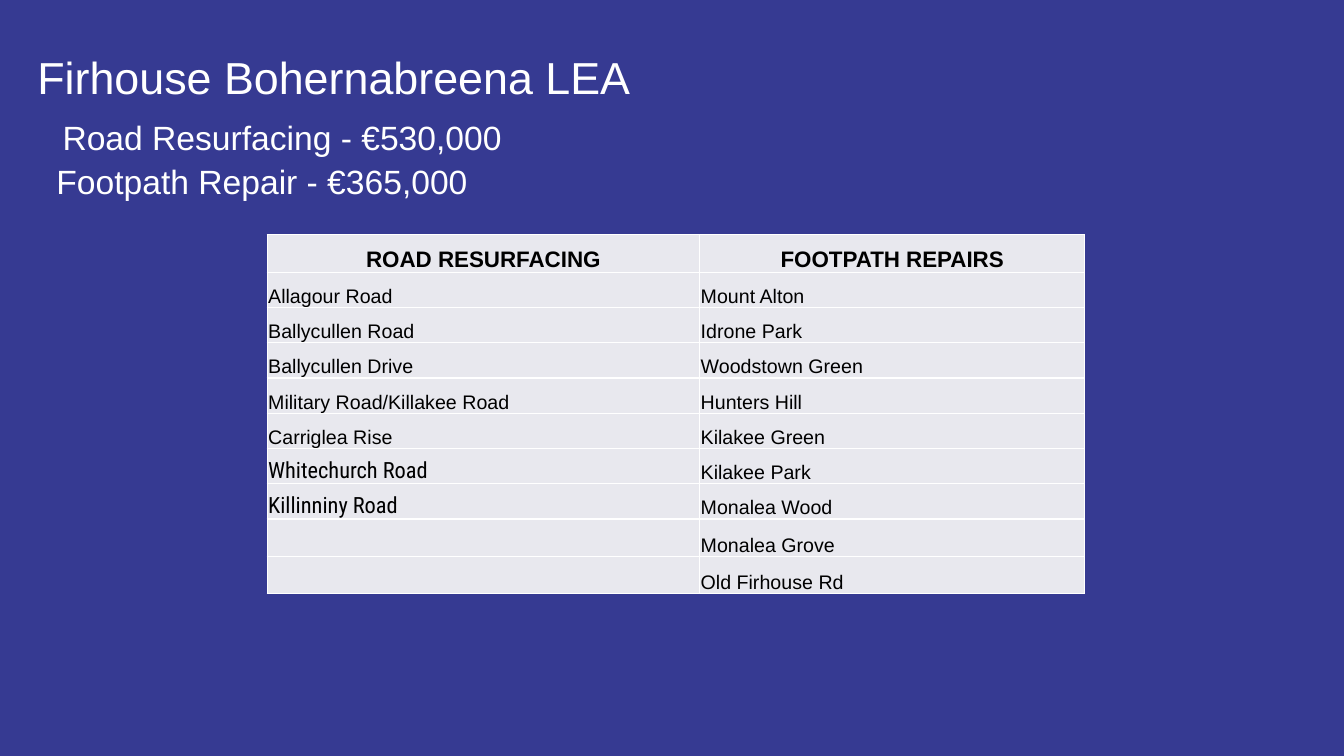
"""Build the Firhouse Bohernabreena road and footpath works slide."""
from itertools import zip_longest

from lxml.etree import SubElement
from pptx import Presentation
from pptx.dml.color import RGBColor
from pptx.enum.text import MSO_ANCHOR as Anchor, MSO_AUTO_SIZE as AutoSize, PP_ALIGN as Align
from pptx.oxml.ns import qn
from pptx.util import Inches, Pt


def paint(fill, color):
    fill.solid()
    fill.fore_color.rgb = RGBColor.from_string(color)


def add_borders(cell, color, points):
    properties = cell._tc.get_or_add_tcPr()
    for position, side in enumerate(("lnL", "lnR", "lnT", "lnB")):
        line = properties.makeelement(qn(f"a:{side}"), {"w": str(Pt(points))})
        properties.insert(position, line)
        solid = SubElement(line, qn("a:solidFill"))
        SubElement(solid, qn("a:srgbClr"), val=color)


TITLE_LINES = [
    ("Firhouse Bohernabreena LEA", 32, 0, 0),
    ("Road Resurfacing - €530,000", 24, 0.25, 6.5),
    ("Footpath Repair - €365,000", 24, 0.19, 0),
]
ROADS = ["ROAD RESURFACING", "Allagour Road", "Ballycullen Road", "Ballycullen Drive",
         "Military Road/Killakee Road", "Carriglea Rise", "Whitechurch Road", "Killinniny Road"]
FOOTPATHS = ["FOOTPATH REPAIRS", "Mount Alton", "Idrone Park", "Woodstown Green", "Hunters Hill",
             "Kilakee Green", "Kilakee Park", "Monalea Wood", "Monalea Grove", "Old Firhouse Rd"]
CONDENSED = ROADS[-2:]
COLUMN_WIDTHS = [4.29, 3.82]
ROW_HEIGHTS = [0.37] + [0.35] * 7 + [0.37] * 2

presentation = Presentation()
presentation.slide_width, presentation.slide_height = Inches(13.33), Inches(7.5)
slide = presentation.slides.add_slide(presentation.slide_layouts[5])
paint(slide.background.fill, "363A92")

title = slide.shapes.title
title.left, title.top, title.width, title.height = map(Inches, (0.37, 0.44, 7.24, 1.73))
frame = title.text_frame
frame.margin_left = frame.margin_right = frame.margin_top = frame.margin_bottom = 0
frame.vertical_anchor = Anchor.TOP
frame.word_wrap = True
frame.auto_size = AutoSize.NONE
frame.text = "\n".join(text for text, *_ in TITLE_LINES)
for paragraph, (_, size, indent, space) in zip(frame.paragraphs, TITLE_LINES):
    paragraph.alignment = Align.LEFT
    paragraph.line_spacing = 1.1
    paragraph.space_before = Pt(space)
    paragraph._p.get_or_add_pPr().set("marL", str(Inches(indent)))
    paragraph.font.size = Pt(size)
    paragraph.font.name = "Arial"
    paint(paragraph.font.fill, "FFFFFF")

table = slide.shapes.add_table(
    len(ROW_HEIGHTS), len(COLUMN_WIDTHS), Inches(2.65), Inches(2.33),
    Inches(sum(COLUMN_WIDTHS)), Inches(sum(ROW_HEIGHTS))).table
for column, width in zip(table.columns, COLUMN_WIDTHS):
    column.width = Inches(width)

for index, works in enumerate(zip_longest(ROADS, FOOTPATHS, fillvalue="")):
    table.rows[index].height = Inches(ROW_HEIGHTS[index])
    header = index == 0
    for cell, text in zip(table.rows[index].cells, works):
        condensed = text in CONDENSED
        cell.margin_left = cell.margin_right = cell.margin_top = Inches(0.01)
        cell.margin_bottom = 0
        cell.vertical_anchor = Anchor.BOTTOM
        paint(cell.fill, "E8E8EE")
        add_borders(cell, "FFFFFF", 1)
        cell.text = text
        paragraph = cell.text_frame.paragraphs[0]
        paragraph.alignment = Align.CENTER if header else Align.LEFT
        paragraph.font.name = "Roboto Condensed" if condensed else "Arial"
        paragraph.font.size = Pt(16 if header or condensed else 14)
        paragraph.font.bold = header
        paint(paragraph.font.fill, "000000")

presentation.save("out.pptx")
